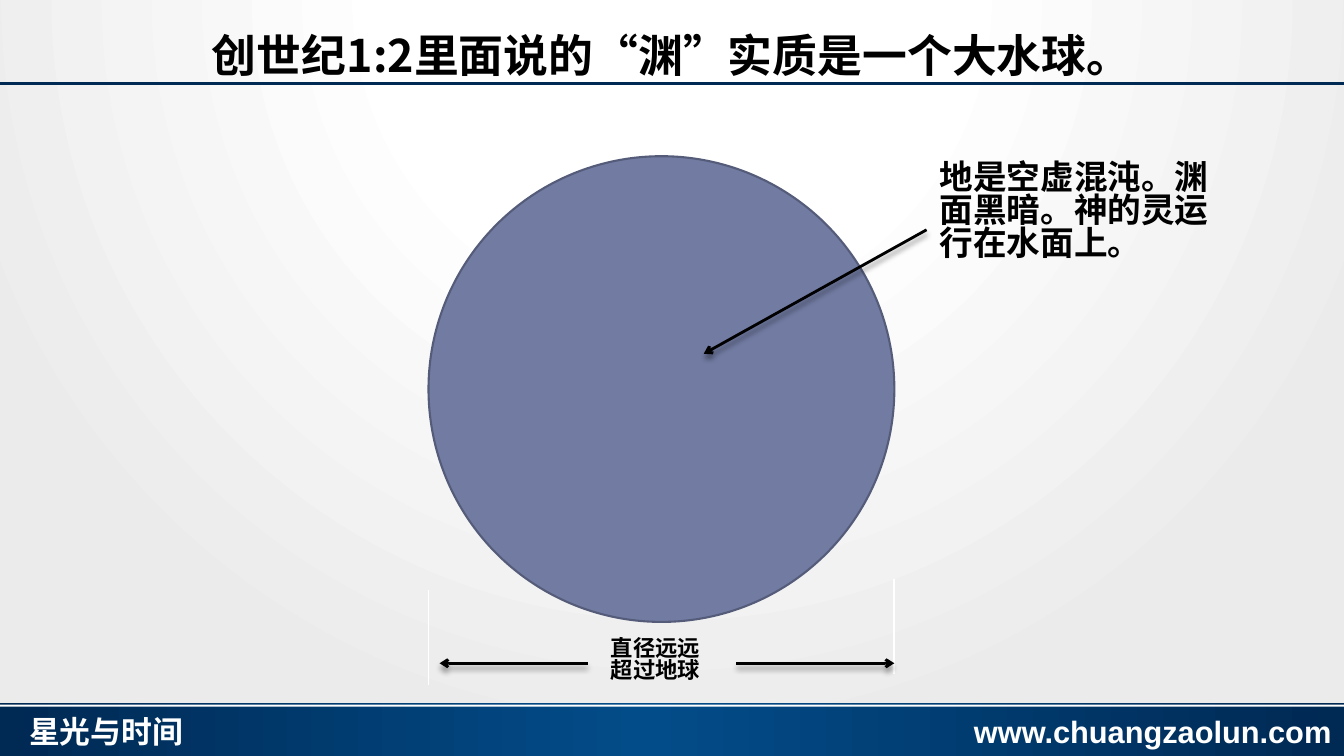
from dataclasses import dataclass

from pptx import Presentation
from pptx.dml.color import RGBColor
from pptx.enum.lang import MSO_LANGUAGE_ID as Lang
from pptx.enum.shapes import MSO_CONNECTOR as Connector, MSO_SHAPE as Preset
from pptx.enum.text import MSO_ANCHOR as Anchor, MSO_AUTO_SIZE as AutoSize, PP_ALIGN as Align
from pptx.oxml import parse_xml
from pptx.oxml.ns import nsdecls, qn
from pptx.util import Inches, Pt


@dataclass(frozen=True)
class Theme:
    black: str = "000000"
    white: str = "FFFFFF"
    mist: str = "EBEBEB"
    navy: str = "002953"
    blue: str = "024C89"
    water: str = "727CA3"
    water_edge: str = "545C79"
    cjk: str = "Noto Sans CJK SC"
    latin: str = "Arial"
    title_size: int = 32
    quote_size: int = 24
    footer_size: int = 22
    label_size: int = 16


THEME = Theme()
WIDTH, HEIGHT = 13.33, 7.5
PADDING = (0.13, 0.07, 0.13, 0.07)


def set_gradient(fill, root, stops, shade):
    """Give a fill any number of stops: (percent, colour, opacity)."""
    fill.gradient()
    old = root.find(".//" + qn("a:gradFill"))
    marks = "".join(
        f'<a:gs pos="{percent * 1000}"><a:srgbClr val="{colour}">'
        f'<a:alpha val="{opacity * 1000}"/></a:srgbClr></a:gs>'
        for percent, colour, opacity in stops)
    old.getparent().replace(old, parse_xml(
        f'<a:gradFill {nsdecls("a")} rotWithShape="1">'
        f"<a:gsLst>{marks}</a:gsLst>{shade}</a:gradFill>"))


def write_text(shape, lines, size, face=THEME.cjk, colour=THEME.black, spacing=0.82,
               align=Align.LEFT, anchor=Anchor.TOP, padding=PADDING, wrap=True):
    frame = shape.text_frame
    left, top, right, bottom = map(Inches, padding)
    frame_format = {
        "auto_size": AutoSize.NONE, "word_wrap": wrap, "vertical_anchor": anchor,
        "margin_left": left, "margin_top": top,
        "margin_right": right, "margin_bottom": bottom,
    }
    for name, value in frame_format.items():
        setattr(frame, name, value)
    font_format = {"size": Pt(size), "bold": True, "name": face,
                   "language_id": Lang.SIMPLIFIED_CHINESE}
    for index, line in enumerate(lines):
        para = frame.add_paragraph() if index else frame.paragraphs[0]
        para.alignment, para.line_spacing = align, spacing
        para.space_before = Pt(0)
        span = para.add_run()
        span.text = line
        for name, value in font_format.items():
            setattr(span.font, name, value)
        span.font.color.rgb = RGBColor.from_string(colour)
        span.font._element.find(qn("a:latin")).addnext(
            parse_xml(f'<a:ea {nsdecls("a")} typeface="{THEME.cjk}"/>'))


def add_text(page, box, lines, size, **options):
    write_text(page.shapes.add_textbox(*map(Inches, box)), lines, size, **options)


def add_preset(page, preset, box, fill=None, edge=None):
    shape = page.shapes.add_shape(preset, *map(Inches, box))
    shape.shadow.inherit = False
    if fill:
        shape.fill.solid()
        shape.fill.fore_color.rgb = RGBColor.from_string(fill)
    if edge:
        shape.line.color.rgb = RGBColor.from_string(edge)
        shape.line.width = Pt(1.5)
    else:
        shape.line.fill.background()
    return shape


def add_line(page, start, end, colour, width):
    line = page.shapes.add_connector(Connector.STRAIGHT, *map(Inches, (*start, *end)))
    line.line.color.rgb = RGBColor.from_string(colour)
    line.line.width = Pt(width)
    effects = parse_xml(f'<a:effectLst {nsdecls("a")}/>')
    line._element.spPr.append(effects)
    return line, effects


def add_arrow(page, start, end):
    line, effects = add_line(page, start, end, THEME.black, 2)
    line.line._ln.append(parse_xml(f'<a:tailEnd {nsdecls("a")} type="arrow"/>'))
    effects.append(parse_xml(
        f'<a:outerShdw {nsdecls("a")} blurRad="{Pt(4)}" dist="{Pt(3.4)}" dir="5400000" '
        f'rotWithShape="0"><a:srgbClr val="{THEME.black}"><a:alpha val="40000"/>'
        "</a:srgbClr></a:outerShdw>"))


def add_background(page):
    set_gradient(
        page.background.fill, page._element,
        [(0, THEME.white, 66), (35, THEME.white, 100), (100, THEME.mist, 100)],
        '<a:path path="circle"><a:fillToRect l="50000" t="-80000" r="50000" b="180000"/></a:path>')


def add_header(page, box):
    left, top, width, height = box
    rule = top + height + 0.02
    add_line(page, (left, rule), (left + width, rule), THEME.navy, 1.75)
    title = page.shapes.title
    title.left, title.top, title.width, title.height = map(Inches, box)
    write_text(title, ["创世纪1:2里面说的“渊”实质是一个大水球。"], THEME.title_size,
               spacing=1.5, align=Align.CENTER, anchor=Anchor.MIDDLE,
               padding=(0.1, 0.05, 0.1, 0.05))


def add_footer(page, box):
    left, top, width, height = box
    band = add_preset(page, Preset.RECTANGLE, box)
    set_gradient(band.fill, band._element.spPr,
                 [(0, THEME.navy, 100), (48, THEME.blue, 100), (100, THEME.navy, 100)],
                 '<a:lin ang="0" scaled="0"/>')
    add_preset(page, Preset.RECTANGLE, (left, top + 0.02, width, 0.02), THEME.white)
    for offset, text in ((9.66, "www.chuangzaolun.com"), (0.29, "星光与时间")):
        add_text(page, (left + offset, top + 0.14, 3.6, 0.36), [text], THEME.footer_size,
                 face=THEME.latin, colour=THEME.white, spacing=0.9,
                 padding=(0, 0, 0, 0), wrap=False)


def add_water_sphere(page, box):
    left, top, width, height = box
    right, bottom = left + width, top + height
    add_preset(page, Preset.OVAL, box, THEME.water, THEME.water_edge)

    # Diameter: limits, arrows and label
    for x, start in ((left, bottom - 0.32), (right, bottom - 0.43)):
        add_line(page, (x, start), (x, start + 0.95), THEME.white, 1.25)
    level = bottom + 0.41
    for start, end in ((left + 3.05, right), (left + 1.58, left + 0.11)):
        add_arrow(page, (start, level), (end, level))
    add_text(page, (left + 1.68, bottom + 0.1, 1.26, 0.67),
             ["直径远远", "超过地球"], THEME.label_size)


def add_verse(page, box):
    left, top, width, height = box
    add_text(page, box, ["地是空虚混沌。渊面黑暗。神的灵运行在水面上。"], THEME.quote_size)
    add_arrow(page, (left, top + 0.73), (left - 2.21, top + 1.96))


def main():
    deck = Presentation()
    deck.slide_width, deck.slide_height = Inches(WIDTH), Inches(HEIGHT)
    page = deck.slides.add_slide(deck.slide_layouts[5])
    add_background(page)
    add_header(page, (0, 0, WIDTH, 0.81))
    add_footer(page, (0, 6.97, WIDTH, 0.53))
    add_water_sphere(page, (4.25, 1.55, 4.62, 4.62))
    add_verse(page, (9.19, 1.55, 2.96, 1.35))
    deck.save("out.pptx")


if __name__ == "__main__":
    main()
